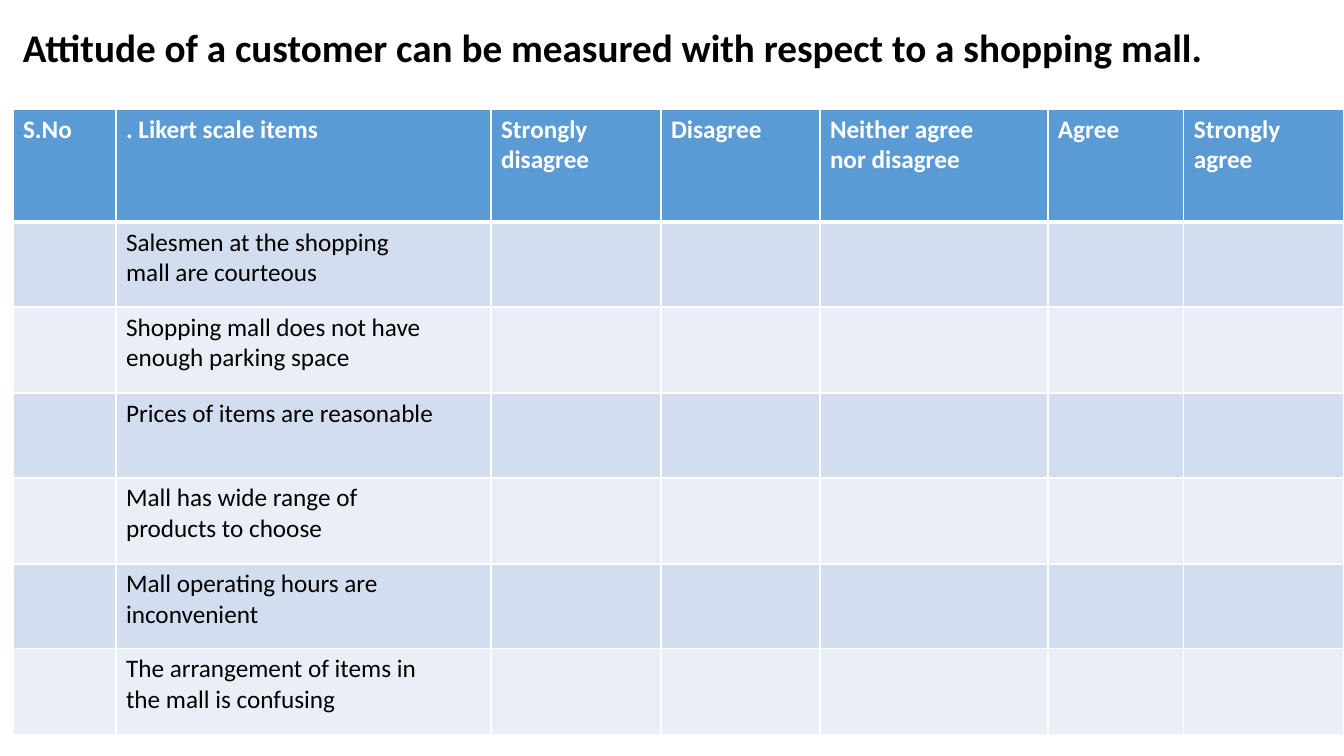
from lxml.etree import SubElement
from pptx import Presentation
from pptx.dml.color import RGBColor
from pptx.enum.text import MSO_ANCHOR
from pptx.oxml.ns import qn
from pptx.util import Pt


def px(count):
    return round(count * 914400 / 100.8)


def color(code):
    return RGBColor.from_string(code)


class Deck:
    """Holds the style and the current slide, and draws each kind of element."""

    face = "Calibri"
    ink = "000000"
    white = "FFFFFF"
    head = "5B9BD5"
    bands = ("D2DEEF", "EAEFF7")

    def __init__(self, wide, high):
        self.show = Presentation()
        self.show.slide_width = px(wide)
        self.show.slide_height = px(high)
        self.slide = self.show.slides.add_slide(self.show.slide_layouts[6])

    def style(self, para, size, tint, bold):
        font = para.font
        font.name = self.face
        font.size = Pt(size)
        font.bold = bold
        font.color.rgb = color(tint)

    def title(self, text, left, top, wide, high):
        box = self.slide.shapes.add_textbox(px(left), px(top), px(wide), px(high))
        frame = box.text_frame
        frame.word_wrap = True
        frame.vertical_anchor = MSO_ANCHOR.TOP
        para = frame.paragraphs[0]
        para.text = text
        para.line_spacing = 0.9
        para.space_before = Pt(10)
        self.style(para, 28, self.ink, True)

    def border(self, cell, base):
        props = cell._tc.get_or_add_tcPr()
        for side, width in (("L", 1), ("R", 1), ("T", 1), ("B", base)):
            line = SubElement(props, qn("a:ln" + side), w=str(Pt(width)))
            fill = SubElement(line, qn("a:solidFill"))
            SubElement(fill, qn("a:srgbClr"), val=self.white)

    def cell(self, cell, text, row):
        first = row == 0
        self.border(cell, 3 if first else 1)
        cell.fill.solid()
        cell.fill.fore_color.rgb = color(self.head if first else self.bands[(row - 1) % 2])
        cell.text = text
        for para in cell.text_frame.paragraphs:
            self.style(para, 18, self.white if first else self.ink, first)

    def table(self, rows, left, top, wides, highs):
        frame = self.slide.shapes.add_table(
            len(highs), len(wides), px(left), px(top), px(sum(wides)), px(sum(highs)))
        grid = frame.table
        for col, wide in zip(grid.columns, wides):
            col.width = px(wide)
        for row, high in zip(grid.rows, highs):
            row.height = px(high)
        for r, texts in enumerate(rows):
            for c, text in enumerate(texts):
                self.cell(grid.cell(r, c), text, r)


def main():
    heads = ["S.No", ". Likert scale items", "Strongly\ndisagree", "Disagree",
             "Neither agree\nnor disagree", "Agree", "Strongly\nagree"]
    items = ["Salesmen at the shopping\nmall are courteous",
             "Shopping mall does not have\nenough parking space",
             "Prices of items are reasonable",
             "Mall has wide range of\nproducts to choose",
             "Mall operating hours are\ninconvenient",
             "The arrangement of items in\nthe mall is confusing"]
    rows = [heads] + [["", item] + [""] * 5 for item in items]
    deck = Deck(1344, 756)
    deck.title("Attitude of a customer can be measured with respect to a shopping mall.",
               13, 24, 1294, 66)
    deck.table(rows, 13, 109, [103, 375, 170, 159, 228, 136, 160], [113] + [85, 86] * 3)
    deck.show.save("out.pptx")


if __name__ == "__main__":
    main()
